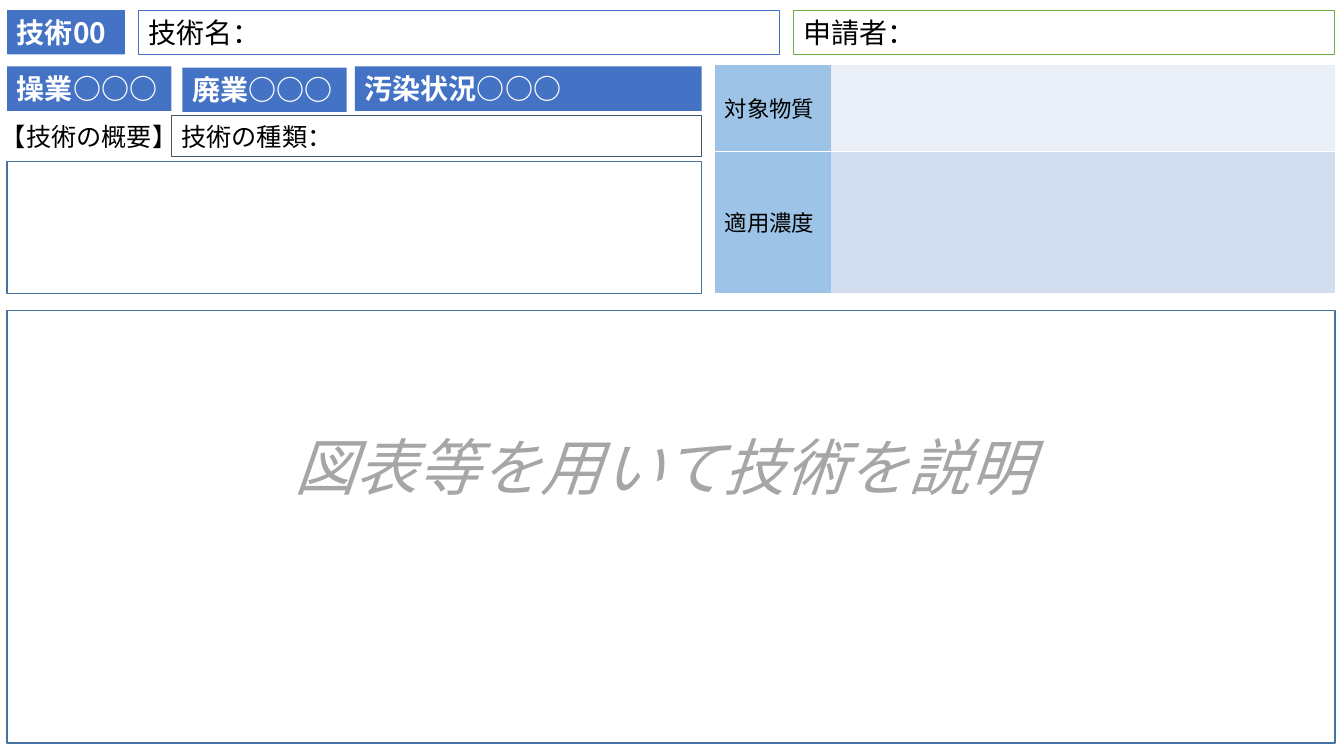
"""Builds the one-page technology summary form."""
from lxml import etree
from pptx import Presentation
from pptx import util as u
from pptx.dml.color import RGBColor
from pptx.enum import shapes, text
from pptx.oxml import parse_xml
from pptx.oxml.ns import nsdecls, qn

FONT = "Noto Sans CJK JP"
BLUE = RGBColor(0x44, 0x72, 0xC4)
GREEN = RGBColor(0x70, 0xAD, 0x47)
SLATE = RGBColor(0x44, 0x54, 0x6A)
FRAME = RGBColor(0x43, 0x73, 0x9E)
GREY = RGBColor(0xA6, 0xA6, 0xA6)
BLACK = RGBColor(0, 0, 0)
WHITE = RGBColor(0xFF, 0xFF, 0xFF)
LABEL_FILL = RGBColor(0x9D, 0xC3, 0xE6)
NO_STYLE = "{2D5ABB26-0587-4C30-8999-92F81FD0307C}"

LEFT, RIGHT, SPLIT = 0.07, 13.24, 6.96
TITLE_ROW, TAG_ROW, KIND_ROW = (0.1, 0.44), (0.66, 0.44), (1.15, 0.4)
SUMMARY_ROW, FIGURE_ROW = (1.6, 1.31), (3.08, 4.29)

TAGS = [
    ("技術00", LEFT, 1.24, TITLE_ROW),
    ("操業○○○", LEFT, 1.7, TAG_ROW),
    ("廃業○○○", 1.81, 3.44, (0.67, 0.44)),
    ("汚染状況○○○", 3.52, SPLIT, TAG_ROW),
]
FIELDS = [
    ("技術名：", 1.37, 7.73, TITLE_ROW, BLUE, 20),
    ("申請者：", 7.87, RIGHT, TITLE_ROW, GREEN, 20),
    ("技術の種類：", 1.7, SPLIT, KIND_ROW, SLATE, 18),
]
FRAMES = [(LEFT, SPLIT, SUMMARY_ROW), (LEFT, RIGHT, FIGURE_ROW)]
HEADING = ("【技術の概要】", -0.09, 1.98, KIND_ROW)
PROMPT = ("図表等を用いて技術を説明", 2.82, 10.48, (4.2, 0.84))
CONDITIONS = [
    ("対象物質", 0.86, RGBColor(0xEA, 0xEF, 0xF7), "a:lnB"),
    ("適用濃度", 1.41, RGBColor(0xD2, 0xDE, 0xEF), "a:lnT"),
]
CONDITION_COLUMNS = (1.15, 5)


def place(left, right, row):
    top, height = row
    return [u.Inches(n) for n in (left, top, right - left, height)]


def write(frame, words, size, color, bold=False, italic=False):
    paragraph = frame.paragraphs[0]
    paragraph.text = words
    paragraph.alignment = text.PP_ALIGN.LEFT
    font = paragraph.font
    font.name, font.size, font.bold, font.italic = FONT, u.Pt(size), bold, italic
    font.color.rgb = color
    defaults = paragraph._p.pPr.find(qn("a:defRPr"))
    etree.SubElement(defaults, qn("a:ea")).set("typeface", FONT)


def fit(frame):
    frame.word_wrap = True
    frame.auto_size = text.MSO_AUTO_SIZE.NONE
    frame.vertical_anchor = text.MSO_ANCHOR.MIDDLE


def add_box(slide, left, right, row, fill=None, line=None, weight=0.75):
    box = slide.shapes.add_shape(shapes.MSO_SHAPE.RECTANGLE, *place(left, right, row))
    box.shadow.inherit = False
    if fill is None:
        box.fill.background()
    else:
        box.fill.solid()
        box.fill.fore_color.rgb = fill
    if line is None:
        box.line.fill.background()
    else:
        box.line.color.rgb = line
        box.line.width = u.Pt(weight)
    fit(box.text_frame)
    return box.text_frame


def add_words(slide, entry, size, color, italic=False):
    words, *position = entry
    frame = slide.shapes.add_textbox(*place(*position)).text_frame
    fit(frame)
    write(frame, words, size, color, italic=italic)


def add_conditions(slide):
    height = sum(row[1] for row in CONDITIONS)
    area = place(7.09, 7.09 + sum(CONDITION_COLUMNS), (0.64, height))
    table = slide.shapes.add_table(len(CONDITIONS), len(CONDITION_COLUMNS), *area).table
    table.first_row = table.horz_banding = False
    table._tbl.tblPr.find(qn("a:tableStyleId")).text = NO_STYLE
    for column, width in zip(table.columns, CONDITION_COLUMNS):
        column.width = u.Inches(width)
    for row, (label, height, value_fill, edge) in zip(table.rows, CONDITIONS):
        row.height = u.Inches(height)
        for cell, fill in zip(row.cells, (LABEL_FILL, value_fill)):
            cell.vertical_anchor = text.MSO_ANCHOR.MIDDLE
            cell.fill.solid()
            cell.fill.fore_color.rgb = fill
            border = parse_xml(
                f'<{edge} {nsdecls("a")} w="{u.Pt(1)}"><a:solidFill>'
                f'<a:srgbClr val="{WHITE}"/></a:solidFill></{edge}>')
            cell._tc.tcPr.insert(0, border)
        write(row.cells[0].text_frame, label, 16, BLACK)


def main():
    deck = Presentation()
    deck.slide_width, deck.slide_height = u.Inches(13.33), u.Inches(7.5)
    slide = deck.slides.add_slide(deck.slide_layouts[6])
    for left, right, row in FRAMES:
        add_box(slide, left, right, row, line=FRAME, weight=1)
    add_words(slide, PROMPT, 44, GREY, italic=True)
    add_conditions(slide)
    add_words(slide, HEADING, 18, BLACK)
    for words, left, right, row, line, size in FIELDS:
        write(add_box(slide, left, right, row, line=line), words, size, BLACK)
    for words, left, right, row in TAGS:
        write(add_box(slide, left, right, row, fill=BLUE), words, 20, WHITE, bold=True)
    deck.save("out.pptx")


if __name__ == "__main__":
    main()
